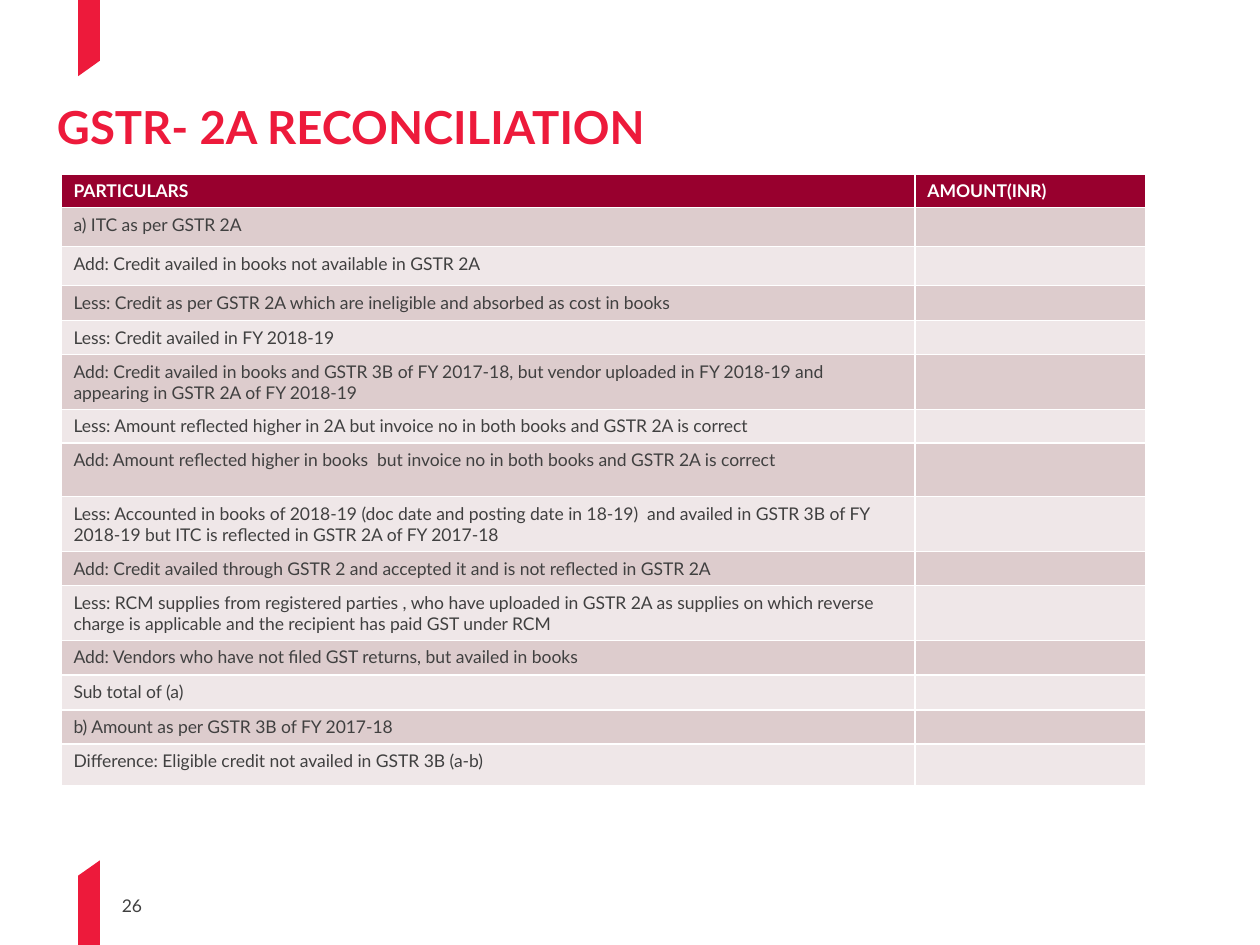
from lxml.etree import SubElement
from pptx import Presentation
from pptx.dml.color import RGBColor
from pptx.enum.text import MSO_ANCHOR
from pptx.oxml.ns import qn
from pptx.util import Pt

FONT = "Lato"
RED, MAROON, WHITE, GREY = "ED1A3B", "98002E", "FFFFFF", "404040"
BANDS = ("DDCCCD", "EFE7E8")

TITLE = "GSTR- 2A RECONCILIATION"
PAGE_NUMBER = "26"
HEADINGS = ("PARTICULARS", "AMOUNT(INR)")
COLUMN_WIDTHS = (488, 131.8)
HEADING_HEIGHT = 18
# Row height in points, particulars (the amounts are left open)
PARTICULARS = [
    (22.3, "a) ITC as per GSTR 2A"),
    (22.3, "Add: Credit availed in books not available in GSTR 2A"),
    (20, "Less: Credit as per GSTR 2A which are ineligible and absorbed as cost in books"),
    (19.4, "Less: Credit availed in FY 2018-19"),
    (30.5, "Add: Credit availed in books and GSTR 3B of FY 2017-18, but vendor uploaded "
           "in FY 2018-19 and appearing in GSTR 2A of FY 2018-19"),
    (19.4, "Less: Amount reflected higher in 2A but invoice no in both books and GSTR 2A is correct"),
    (30.5, "Add: Amount reflected higher in books  but invoice no in both books and GSTR 2A is correct"),
    (31.5, "Less: Accounted in books of 2018-19 (doc date and posting date in 18-19)  and availed "
           "in GSTR 3B of FY 2018-19 but ITC is reflected in GSTR 2A of FY 2017-18"),
    (19.4, "Add: Credit availed through GSTR 2 and accepted it and is not reflected in GSTR 2A"),
    (30.5, "Less: RCM supplies from registered parties , who have uploaded in GSTR 2A as supplies "
           "on which reverse charge is applicable and the recipient has paid GST under RCM"),
    (20, "Add: Vendors who have not filed GST returns, but availed in books"),
    (20, "Sub total of (a)"),
    (19.2, "b) Amount as per GSTR 3B of FY 2017-18"),
    (24, "Difference: Eligible credit not availed in GSTR 3B (a-b)"),
]

# Slanted ribbons at the page edges, as corner points
RIBBON_LEFT, RIBBON_RIGHT = 44.6, 57.1
RIBBONS = [
    [(RIBBON_RIGHT, 34.7), (RIBBON_RIGHT, 0), (RIBBON_LEFT, 0), (RIBBON_LEFT, 43.6)],
    [(RIBBON_LEFT, 500.4), (RIBBON_LEFT, 540), (RIBBON_RIGHT, 540), (RIBBON_RIGHT, 491.6)],
]


def color(value):
    return RGBColor.from_string(value)


def style(paragraph, size, ink, bold=False):
    font = paragraph.font
    font.name, font.size, font.bold = FONT, Pt(size), bold
    font.color.rgb = color(ink)


def add_ribbon(slide, corners):
    points = [(Pt(x), Pt(y)) for x, y in corners]
    builder = slide.shapes.build_freeform(*points[0])
    builder.add_line_segments(points[1:], close=True)
    ribbon = builder.convert_to_shape()
    ribbon.shadow.inherit = False
    ribbon.fill.solid()
    ribbon.fill.fore_color.rgb = color(RED)
    ribbon.line.fill.background()


def add_text(slide, box, text, size, ink, bold=False):
    label = slide.shapes.add_textbox(*map(Pt, box))
    frame = label.text_frame
    frame.word_wrap = True
    frame.text = text
    style(frame.paragraphs[0], size, ink, bold)
    return frame


def fill_cell(cell, text, background, ink, bold):
    cell.fill.solid()
    cell.fill.fore_color.rgb = color(background)
    cell.text = text
    paragraph = cell.text_frame.paragraphs[0]
    style(paragraph, 10, ink, bold)
    if not text:  # keep an empty cell from stretching its row
        SubElement(paragraph._p, qn("a:endParaRPr")).set("sz", "1000")


def add_reconciliation(slide):
    rows = [(HEADING_HEIGHT, HEADINGS)]
    rows += [(height, (text, "")) for height, text in PARTICULARS]
    table = slide.shapes.add_table(
        len(rows), len(HEADINGS), Pt(34.8), Pt(99.4),
        Pt(sum(COLUMN_WIDTHS)), Pt(sum(height for height, _ in rows))).table
    for column, width in zip(table.columns, COLUMN_WIDTHS):
        column.width = Pt(width)
    for r, (height, texts) in enumerate(rows):
        table.rows[r].height = Pt(height)
        heading = r == 0
        background = MAROON if heading else BANDS[(r - 1) % 2]
        for c, text in enumerate(texts):
            fill_cell(table.cell(r, c), text, background, WHITE if heading else GREY, heading)


def main():
    deck = Presentation()
    deck.slide_width, deck.slide_height = Pt(720), Pt(540)
    slide = deck.slides.add_slide(deck.slide_layouts[6])

    for corners in RIBBONS:
        add_ribbon(slide, corners)

    # Page number
    number = add_text(slide, (69.6, 511, 32.4, 12.2), PAGE_NUMBER, 10, GREY)
    number.margin_left = number.margin_right = number.margin_top = number.margin_bottom = 0
    number.vertical_anchor = MSO_ANCHOR.BOTTOM

    add_reconciliation(slide)

    # Title
    title = add_text(slide, (25.5, 59, 666.7, 25.2), TITLE, 26, RED, True)
    title.paragraphs[0].line_spacing = 0.8

    deck.save("out.pptx")


if __name__ == "__main__":
    main()
